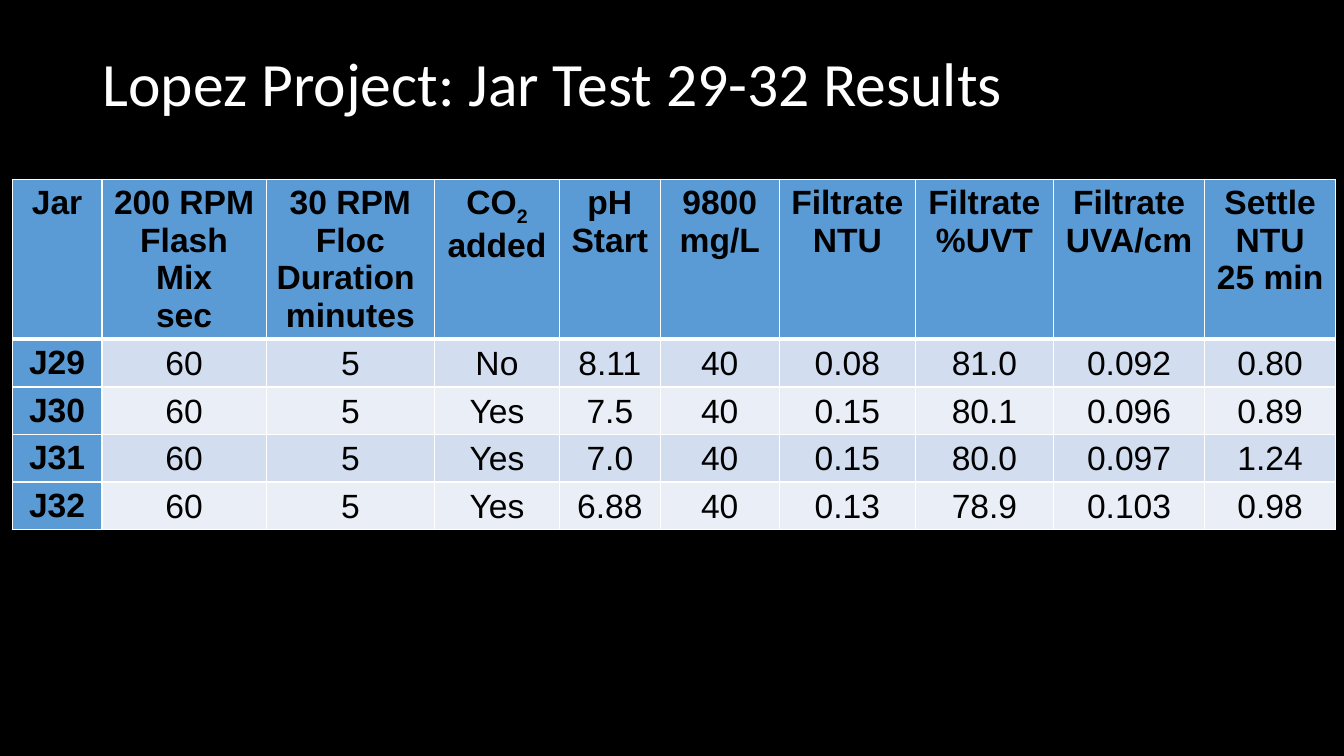
from lxml import etree
from pptx import Presentation
from pptx.dml.color import RGBColor
from pptx.enum.text import MSO_ANCHOR, MSO_AUTO_SIZE, PP_ALIGN
from pptx.oxml.ns import qn
from pptx.util import Cm, Pt

BLACK = RGBColor(0x00, 0x00, 0x00)
WHITE = RGBColor(0xFF, 0xFF, 0xFF)
BLUE = RGBColor(0x5B, 0x9B, 0xD5)
BANDS = (RGBColor(0xD2, 0xDE, 0xEF), RGBColor(0xEA, 0xEF, 0xF7))
LEFT, CENTER = PP_ALIGN.LEFT, PP_ALIGN.CENTER
MIDDLE = MSO_ANCHOR.MIDDLE
NO_AUTOFIT = MSO_AUTO_SIZE.NONE
TITLE_ONLY = 5

# An underscore marks the start of a subscript
HEADERS = ["Jar", "200 RPM\nFlash\nMix\nsec", "30 RPM\nFloc\nDuration \nminutes",
           "CO_2\nadded", "pH\nStart", "9800\nmg/L", "Filtrate\nNTU",
           "Filtrate\n%UVT", "Filtrate\nUVA/cm", "Settle\nNTU\n25 min"]
RESULTS = [
    ["J29", "60", "5", "No", "8.11", "40", "0.08", "81.0", "0.092", "0.80"],
    ["J30", "60", "5", "Yes", "7.5", "40", "0.15", "80.1", "0.096", "0.89"],
    ["J31", "60", "5", "Yes", "7.0", "40", "0.15", "80.0", "0.097", "1.24"],
    ["J32", "60", "5", "Yes", "6.88", "40", "0.13", "78.9", "0.103", "0.98"],
]
COL_WIDTHS = [2.26, 4.14, 4.24, 3.15, 2.54, 3, 3.43, 3.48, 3.81, 3.3]
HEADER_HEIGHT, ROW_HEIGHT = 1.45, 1.04


def format_run(r, size, font, color, bold=False):
    r.font.size = Pt(size)
    r.font.name = font
    r.font.color.rgb = color
    r.font.bold = bold


def add_title(s, text, left, top, width, height):
    sp = s.shapes.title
    sp.left, sp.top, sp.width, sp.height = Cm(left), Cm(top), Cm(width), Cm(height)
    tf = sp.text_frame
    tf.text = text
    tf.auto_size = NO_AUTOFIT
    tf.vertical_anchor = MIDDLE
    p = tf.paragraphs[0]
    p.alignment = LEFT
    p.line_spacing = 0.9
    format_run(p.runs[0], 44, "Calibri", WHITE)


def set_borders(cell, top, bottom):
    tc_pr = cell._tc.get_or_add_tcPr()
    for side, width in (("L", 1), ("R", 1), ("T", top), ("B", bottom)):
        ln = etree.SubElement(tc_pr, qn(f"a:ln{side}"), w=str(Pt(width)))
        fill = etree.SubElement(ln, qn("a:solidFill"))
        etree.SubElement(fill, qn("a:srgbClr"), val=str(WHITE))


def fill_cell(cell, text, row, col):
    is_header, is_label = row == 0, row == 0 or col == 0
    set_borders(cell, 3 if row == 1 else 1, 3 if is_header else 1)
    cell.fill.solid()
    cell.fill.fore_color.rgb = BLUE if is_label else BANDS[(row - 1) % 2]
    if not is_label:
        cell.vertical_anchor = MIDDLE
        cell.margin_left = cell.margin_right = cell.margin_top = Cm(0.03)
        cell.margin_bottom = 0

    tf = cell.text_frame
    for i, line in enumerate(text.split("\n")):
        p = tf.add_paragraph() if i else tf.paragraphs[0]
        p.alignment = CENTER
        for j, part in enumerate(line.split("_")):
            r = p.add_run()
            r.text = part
            format_run(r, 24, "Arial", BLACK, is_label)
            if j:
                r._r.get_or_add_rPr().set("baseline", "-25000")


def add_results_table(s, left, top, width, height):
    rows = [HEADERS] + RESULTS
    frame = s.shapes.add_table(len(rows), len(HEADERS),
                               Cm(left), Cm(top), Cm(width), Cm(height))
    table = frame.table
    for column, col_width in zip(table.columns, COL_WIDTHS):
        column.width = Cm(col_width)
    # Minimum heights: rows grow to fit their text
    for i, row in enumerate(table.rows):
        row.height = Cm(ROW_HEIGHT if i else HEADER_HEIGHT)
    frame.height = Cm(height)

    for i, texts in enumerate(rows):
        for j, text in enumerate(texts):
            fill_cell(table.cell(i, j), text, i, j)


def main():
    prs = Presentation()
    prs.slide_width, prs.slide_height = Cm(33.87), Cm(19.05)
    s = prs.slides.add_slide(prs.slide_layouts[TITLE_ONLY])
    s.background.fill.solid()
    s.background.fill.fore_color.rgb = BLACK

    # Title
    add_title(s, "Lopez Project: Jar Test 29-32 Results", 2.33, 0.33, 29.21, 3.68)
    # Jar test results
    add_results_table(s, 0.31, 4.52, sum(COL_WIDTHS), 9.4)
    prs.save("out.pptx")


if __name__ == "__main__":
    main()
